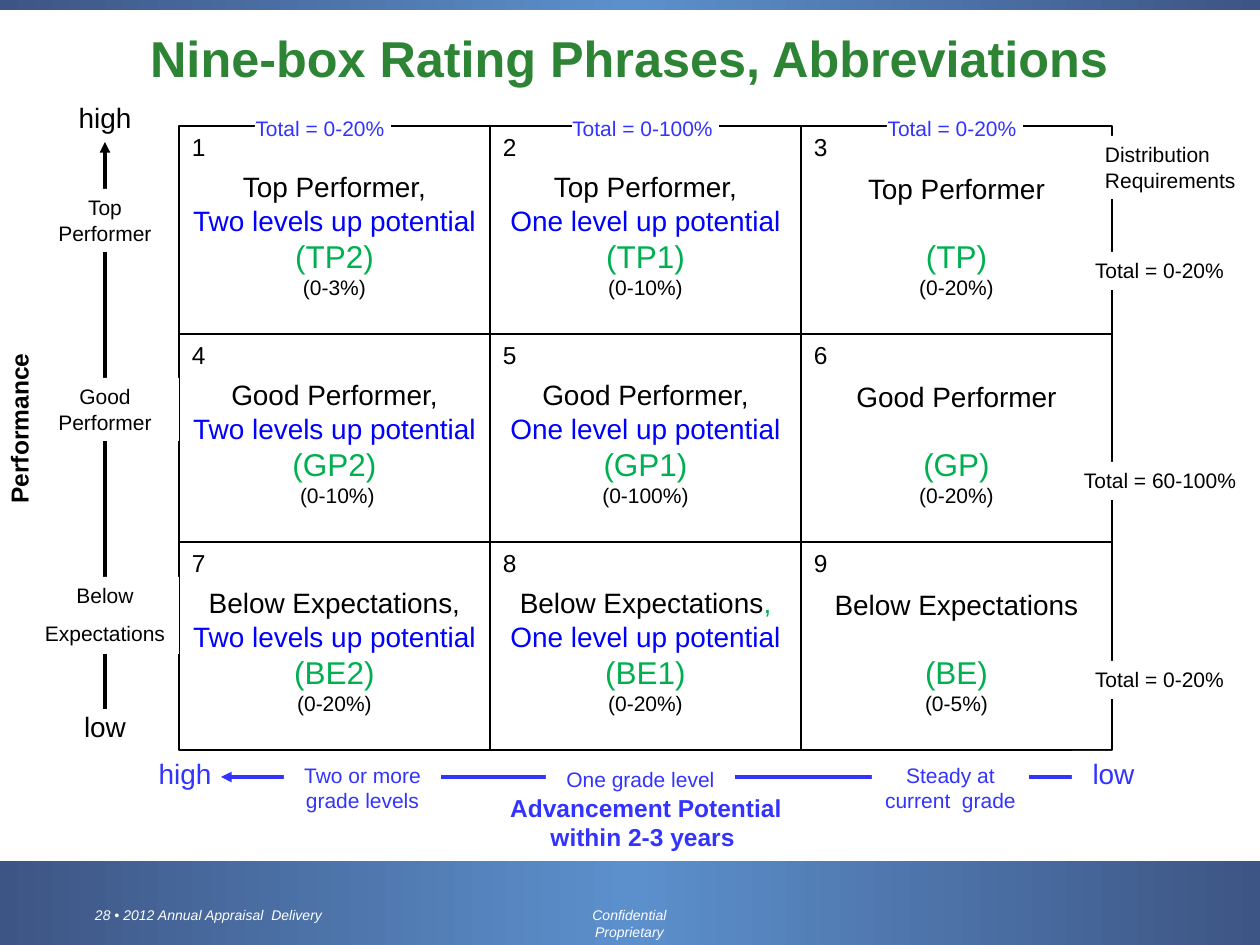
from copy import deepcopy

from lxml import etree
from pptx import Presentation
from pptx import util as u
from pptx.dml.color import RGBColor
from pptx.enum import shapes, text
from pptx.oxml.ns import qn

PX = u.Inches(1) / 126
BLACK, WHITE, BLUE, GREEN = "000000", "FFFFFF", "3333FF", "00B050"
LEFT, MID = text.PP_ALIGN.LEFT, text.PP_ALIGN.CENTER
TOP, CENTER, BOTTOM = (text.MSO_ANCHOR.TOP, text.MSO_ANCHOR.MIDDLE,
                       text.MSO_ANCHOR.BOTTOM)


def emu(px):
    return u.Emu(round(px * PX))


def rgb(code):
    return RGBColor.from_string(code)


def apply(obj, vals):
    for key, val in vals.items():
        setattr(obj, key, val)


class Page:
    font = "Arial"

    def __init__(self, slide):
        self.slide = slide

    def words(self, shape, paras, size=12, color=BLACK, align=MID, anchor=TOP,
              wrap=True, grow=True, gap=0, pads=(13, 6, 13, 6), **face):
        """Each paragraph is a string or a dict with runs, size and before."""
        frame = shape.text_frame
        fit = text.MSO_AUTO_SIZE
        apply(frame, {"word_wrap": wrap, "vertical_anchor": anchor,
                      "auto_size": fit.SHAPE_TO_FIT_TEXT if grow else fit.NONE})
        sides = ("left", "top", "right", "bottom")
        apply(frame, {f"margin_{s}": emu(p) for s, p in zip(sides, pads)})
        for i, item in enumerate(paras):
            if isinstance(item, str):
                item = {"runs": [(item, color)]}
            para = frame.add_paragraph() if i else frame.paragraphs[0]
            para.alignment = align
            para.space_before = u.Pt(item.get("before", gap) if i else 0)
            for part, tint in item["runs"]:
                run = para.add_run()
                run.text = part
                apply(run.font, {"name": self.font,
                                 "size": u.Pt(item.get("size", size)), **face})
                run.font.color.rgb = rgb(tint)

    def title(self, box, line, **style):
        shape = self.slide.shapes.title
        apply(shape, dict(zip(("left", "top", "width", "height"),
                              map(emu, box))))
        self.words(shape, [line], grow=False, **style)

    def rect(self, box, fill=None, line=None):
        shape = self.slide.shapes.add_shape(
            shapes.MSO_SHAPE.RECTANGLE, *map(emu, box))
        shape.shadow.inherit = False
        if fill:
            shape.fill.solid()
            shape.fill.fore_color.rgb = rgb(fill)
        else:
            shape.fill.background()
        if line:
            shape.line.color.rgb = rgb(line)
            shape.line.width = u.Pt(1)
        else:
            shape.line.fill.background()
        return shape

    def band(self, box, edge, core):
        shape = self.rect(box)
        shape.fill.gradient()
        shape.fill.gradient_angle = 0
        stops = shape._element.spPr.find(".//" + qn("a:gsLst"))
        stops.insert(1, deepcopy(stops[0]))
        for stop, pos, tint in zip(shape.fill.gradient_stops, (0, 0.5, 1),
                                   (edge, core, edge)):
            stop.position = pos
            stop.color.rgb = rgb(tint)

    def label(self, box, paras, **style):
        self.words(self.rect(box, WHITE), paras, **style)

    def note(self, box, paras, turn=0, **style):
        shape = self.slide.shapes.add_textbox(*map(emu, box))
        shape.rotation = turn
        self.words(shape, paras, **style)

    def arrow(self, start, end, color):
        line = self.slide.shapes.add_connector(
            shapes.MSO_CONNECTOR.STRAIGHT, *map(emu, start + end))
        line.line.color.rgb = rgb(color)
        line.line.width = u.Pt(2)
        etree.SubElement(line._element.spPr.find(qn("a:ln")),
                         qn("a:tailEnd"), type="triangle")
        etree.SubElement(line._element.spPr, qn("a:effectLst"))


def main():
    deck = Presentation()
    deck.slide_width, deck.slide_height = u.Inches(10), u.Inches(7.5)
    page = Page(deck.slides.add_slide(deck.slide_layouts[5]))

    # Bands, footer and title
    for box in ((0, 861, 1260, 84), (0, 0, 1260, 10)):
        page.band(box, "3D5584", "5C90CC")
    foot = {"size": 8, "color": WHITE, "italic": True}
    page.note((82, 901, 335, 29), ["28 • 2012 Annual Appraisal  Delivery"],
              align=LEFT, **foot)
    page.note((544, 901, 171, 46), ["Confidential Proprietary"],
              pads=(18, 6, 18, 6), **foot)
    page.title((10, 31, 1239, 53), "Nine-box Rating Phrases, Abbreviations",
               size=28.8, color="2D8435", anchor=CENTER, bold=True)

    # Axes
    page.note((136, 751, 98, 47), ["high"], size=16, color=BLUE)
    page.arrow((1103, 777), (221, 777), BLUE)
    page.note((-94, 407, 227, 43), ["Performance"], turn=270, size=14,
              bold=True)
    for top, end in ((95, "high"), (704, "low")):
        page.note((63, top, 84, 47), [end], size=16)
    page.arrow((105, 709), (105, 142), BLACK)

    # Nine boxes: level, potential, code and share
    left, top, wide, high = 179, 126, 311, 208
    rows = (("Top Performer", "TP", ("(0-3%)", "(0-10%)", "(0-20%)")),
            ("Good Performer", "GP", (" (0-10%)", "(0-100%)", "(0-20%)")),
            ("Below Expectations", "BE", ("(0-20%)", "(0-20%)", "(0-5%)")))
    cols = (("Two levels up potential", "2"), ("One level up potential", "1"),
            ("", ""))
    for r, (level, code, shares) in enumerate(rows):
        for c, ((hope, mark), share) in enumerate(zip(cols, shares)):
            x, y = left + c * wide, top + r * high
            comma = GREEN if (r, c) == (2, 1) else BLACK
            head = [(level, BLACK)] + ([(",", comma)] if hope else [])
            paras = [{"runs": head}]
            if hope:
                paras.append({"runs": [(hope, "0000FF")]})
            paras += [{"runs": [(f"({code}{mark})", GREEN)], "size": 18,
                       "before": 0 if hope else 18.4},
                      {"runs": [(share, BLACK)], "size": 12}]
            page.words(page.rect((x, y, wide, high), line=BLACK), paras,
                       size=16, anchor=BOTTOM, wrap=False, grow=False,
                       pads=(13, 6, 13, 34))
            page.note((x, y, 52, 39), [str(3 * r + c + 1)], size=14,
                      align=LEFT)

    # Performance levels
    page.label((37, 189, 136, 63), ["Top Performer"])
    page.label((31, 378, 148, 63), ["Good Performer"])
    page.label((31, 577, 148, 77), ["Below", "Expectations"], gap=7)

    # Column and row totals
    for x, w, share in ((255, 136, "0-20%"), (572, 147, "0-100%"),
                        (887, 136, "0-20%")):
        page.label((x, 116, w, 25), [f"Total = {share} "], color=BLUE,
                   anchor=CENTER, wrap=False, pads=(0, 0, 0, 0))
    side = {"align": LEFT, "wrap": False}
    page.label((1092, 136, 158, 63), ["Distribution", "Requirements"], **side)
    for x, y, w, share in ((1082, 252, 155, "0-20%"),
                           (1071, 462, 179, "60-100%"),
                           (1082, 661, 155, "0-20%")):
        page.label((x, y, w, 38), [f"Total = {share}"], **side)

    # Advancement potential
    page.label((1072, 751, 83, 47), ["low"], size=16, color=BLUE)
    page.note((472, 787, 348, 72), ["Advancement Potential within 2-3 years "],
              size=14, color=BLUE, bold=True)
    for box, grade in (((546, 760, 189, 38), "One grade level"),
                       ((872, 756, 157, 63), "Steady at current  grade"),
                       ((284, 756, 157, 63), "Two or more grade levels")):
        page.label(box, [grade], color=BLUE, anchor=CENTER)

    deck.save("out.pptx")


if __name__ == "__main__":
    main()
